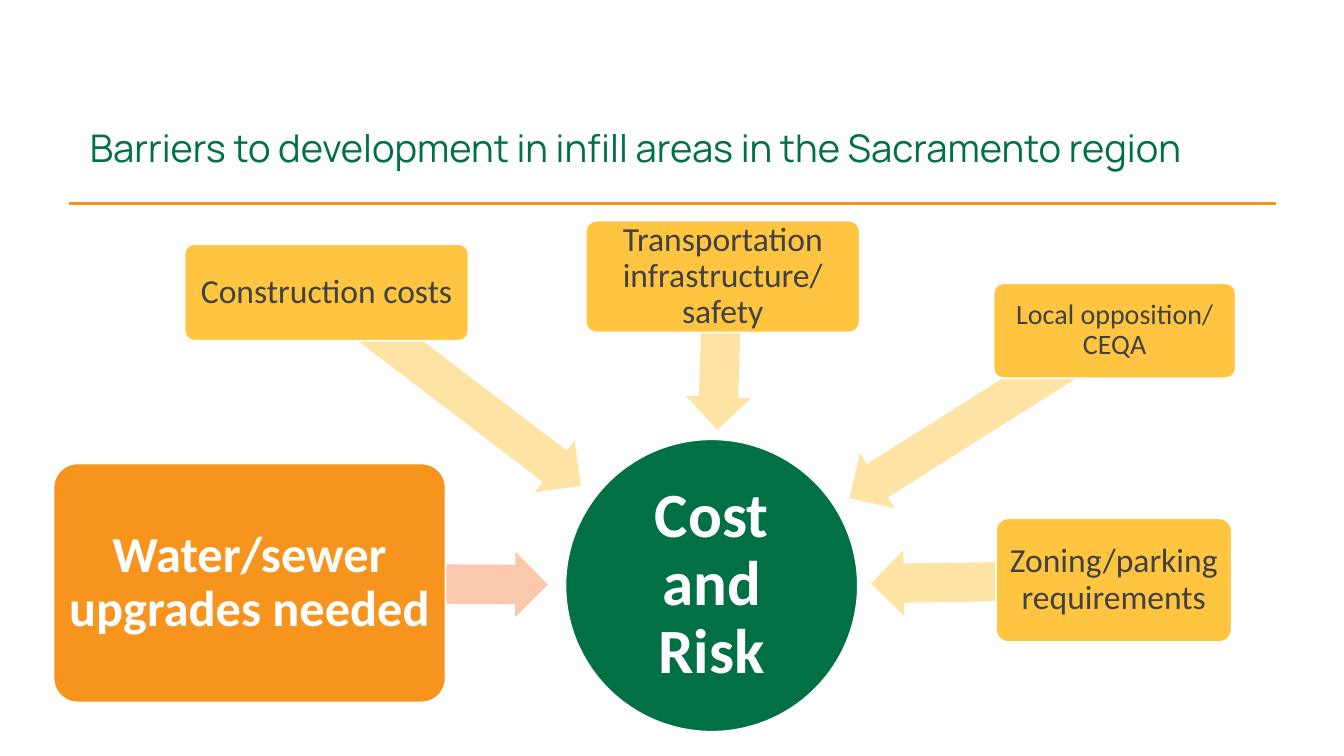
from dataclasses import dataclass
from math import atan2, cos, degrees, radians, sin

from lxml.etree import SubElement
from pptx import Presentation
from pptx.dml.color import RGBColor
from pptx.enum.shapes import MSO_CONNECTOR, MSO_SHAPE
from pptx.enum.text import MSO_ANCHOR, MSO_AUTO_SIZE, PP_ALIGN
from pptx.oxml.ns import qn
from pptx.shapes.autoshape import Shape
from pptx.slide import Slide
from pptx.util import Cm, Pt

COLORS = {
    "green": "017145",
    "orange": "F7941E",
    "peach": "FAC8AC",
    "yellow": "FFC541",
    "grey": "414141",
    "white": "FFFFFF",
}
ARROW_HEIGHT = 1.65


@dataclass
class Node:
    text: str
    x: float
    y: float
    w: float
    h: float
    size: float
    inset: float = 0.12
    fill: str = "yellow"
    color: str = "grey"
    bold: bool = False
    arrow_length: float = 0
    arrow_fill: str = "yellow"
    arrow_alpha: int = 47

    @property
    def center(self) -> tuple[float, float]:
        return self.x + self.w / 2, self.y + self.h / 2


HUB = Node("Cost and Risk", 14.25, 11.07, 7.37, 7.37, 45, 0.08, "green", "white", True)
BARRIERS = [
    Node("Water/sewer upgrades needed", 1.35, 11.68, 9.88, 6.02, 36, 0.18,
         "orange", "white", True, 7.52, "peach", 100),
    Node("Construction costs", 4.65, 6.15, 7.16, 2.44, 24, arrow_length=8.05),
    Node("Transportation infrastructure/ safety", 14.76, 5.56, 6.91, 2.82, 24,
         arrow_length=3.86),
    Node("Local opposition/ CEQA", 25.04, 7.14, 6.1, 2.39, 20, 0.1, arrow_length=7.9),
    Node("Zoning/parking requirements", 25.1, 13.06, 5.94, 3.12, 24, arrow_length=6.12),
]


def rgb(name: str) -> RGBColor:
    return RGBColor.from_string(COLORS[name])


def add_filled(s: Slide, kind: MSO_SHAPE, x: float, y: float, w: float, h: float,
               fill: str) -> Shape:
    sp = s.shapes.add_shape(kind, Cm(x), Cm(y), Cm(w), Cm(h))
    sp.shadow.inherit = False
    sp.fill.solid()
    sp.fill.fore_color.rgb = rgb(fill)
    return sp


def add_run(sp: Shape, text: str, font: str, size: float, color: str,
            align: PP_ALIGN, spacing: float, bold: bool = False) -> None:
    p = sp.text_frame.paragraphs[0]
    p.alignment = align
    p.line_spacing = spacing
    r = p.add_run()
    r.text = text
    r.font.name = font
    r.font.size = Pt(size)
    r.font.bold = bold
    r.font.color.rgb = rgb(color)


def add_node(s: Slide, node: Node, kind: MSO_SHAPE) -> None:
    sp = add_filled(s, kind, node.x, node.y, node.w, node.h, node.fill)
    if kind == MSO_SHAPE.ROUNDED_RECTANGLE:
        sp.adjustments[0] = 0.1
    sp.line.color.rgb = rgb("white")
    sp.line.width = Pt(1.25)
    tf = sp.text_frame
    tf.word_wrap = True
    tf.vertical_anchor = MSO_ANCHOR.MIDDLE
    tf.margin_left = tf.margin_right = tf.margin_top = tf.margin_bottom = Cm(node.inset)
    add_run(sp, node.text, "Calibri", node.size, node.color, PP_ALIGN.CENTER, 0.9, node.bold)


def add_arrow(s: Slide, node: Node) -> None:
    (x, y), (hub_x, hub_y) = node.center, HUB.center
    angle = degrees(atan2(hub_y - y, hub_x - x))
    mid_x = x + node.arrow_length / 2 * cos(radians(angle))
    mid_y = y + node.arrow_length / 2 * sin(radians(angle))
    sp = add_filled(s, MSO_SHAPE.LEFT_ARROW, mid_x - node.arrow_length / 2,
                    mid_y - ARROW_HEIGHT / 2, node.arrow_length, ARROW_HEIGHT,
                    node.arrow_fill)
    sp.adjustments[0] = 0.6
    sp.adjustments[1] = 0.5
    sp.rotation = angle + 180
    sp.line.fill.background()
    if node.arrow_alpha < 100:
        color = sp.fill._xPr.find(qn("a:solidFill"))[0]
        SubElement(color, qn("a:alpha")).set("val", str(node.arrow_alpha * 1000))


def add_title(s: Slide, text: str) -> None:
    sp = s.shapes.title
    sp.left, sp.top, sp.width, sp.height = Cm(2.01), Cm(3.23), Cm(32.13), Cm(1.83)
    tf = sp.text_frame
    tf.word_wrap = True
    tf.auto_size = MSO_AUTO_SIZE.NONE
    tf.vertical_anchor = MSO_ANCHOR.TOP
    add_run(sp, text, "Manrope", 27.2, "green", PP_ALIGN.LEFT, 0.8)


def add_rule(s: Slide) -> None:
    line = s.shapes.add_connector(MSO_CONNECTOR.STRAIGHT, Cm(1.73), Cm(5.13),
                                  Cm(32.16), Cm(5.13))
    line.line.color.rgb = rgb("orange")
    line.line.width = Pt(2.5)
    SubElement(line._element.spPr, qn("a:effectLst"))


def main() -> None:
    prs = Presentation()
    prs.slide_width, prs.slide_height = Cm(33.87), Cm(19.05)
    s = prs.slides.add_slide(prs.slide_layouts[5])
    add_rule(s)
    add_title(s, "Barriers to development in infill areas in the Sacramento region")
    add_node(s, HUB, MSO_SHAPE.OVAL)
    for barrier in BARRIERS:
        add_arrow(s, barrier)
        add_node(s, barrier, MSO_SHAPE.ROUNDED_RECTANGLE)
    prs.save("out.pptx")


if __name__ == "__main__":
    main()
